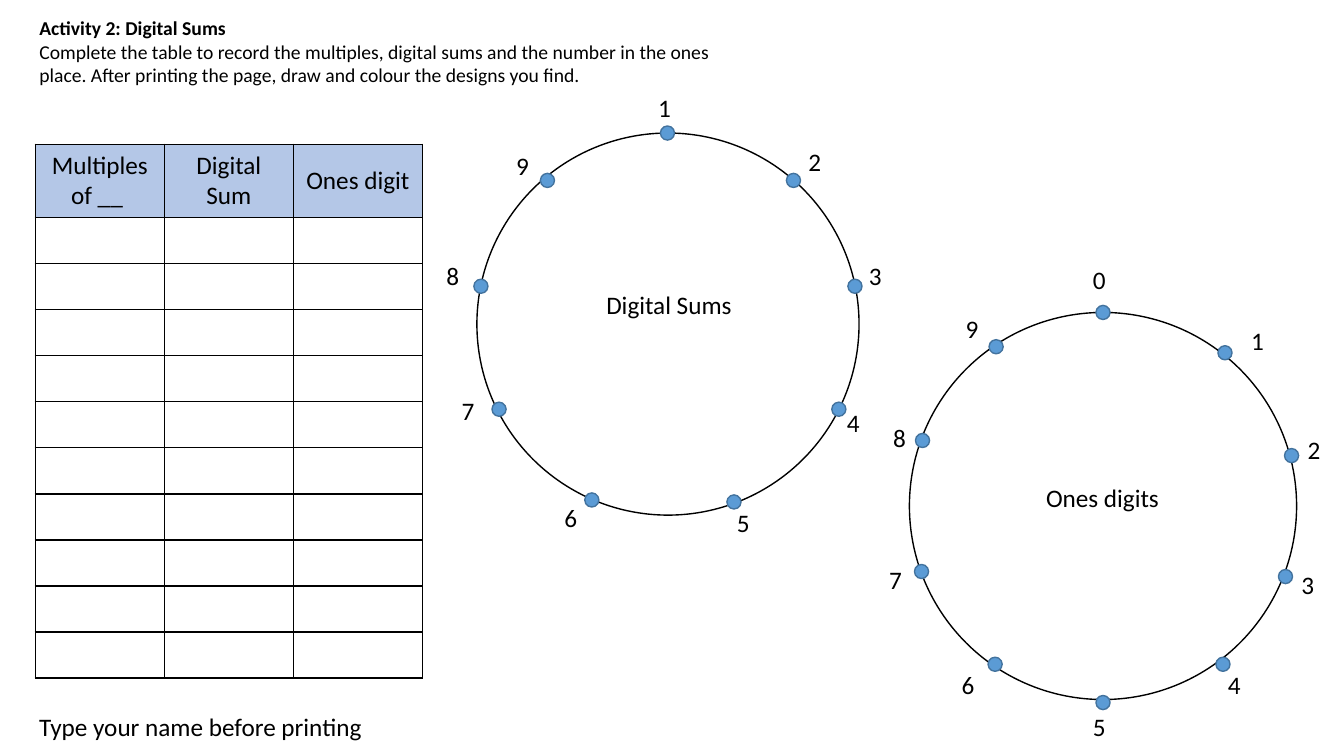
"""Build the digital sums worksheet: a table to fill in and two rings of dots."""
from lxml import etree
from pptx import Presentation
from pptx.dml.color import RGBColor
from pptx.enum.shapes import MSO_SHAPE
from pptx.enum.text import MSO_ANCHOR, MSO_AUTO_SIZE, PP_ALIGN
from pptx.oxml.ns import qn
from pptx.util import Inches, Pt

HUES = {"ink": "000000", "head": "B4C7E7", "dot": "5B9BD5", "edge": "43739E"}
RGB = {name: RGBColor.from_string(hue) for name, hue in HUES.items()}
FRAME = {"word_wrap": False, "auto_size": MSO_AUTO_SIZE.NONE, "vertical_anchor": MSO_ANCHOR.TOP}
FONT = {"name": "Calibri", "size": Pt(18), "bold": False}

deck = Presentation()
deck.slide_width, deck.slide_height = Inches(13.33), Inches(7.5)
UNIT = deck.slide_height // 750
page = deck.slides.add_slide(deck.slide_layouts[5])


def write(frame, lines, align=PP_ALIGN.LEFT, **extra):
    """Fill a text frame with evenly formatted lines."""
    for key, value in (FRAME | extra).items():
        setattr(frame, key, value)
    frame.text = "\n".join(lines)
    for para in frame.paragraphs:
        para.alignment = align
        for key, value in FONT.items():
            setattr(para.font, key, value)
        para.font.color.rgb = RGB["ink"]


def disc(shapes, x, y, size, line, fill=None):
    """Draw a circle from its top left corner, hollow if no fill is named."""
    shape = shapes.add_shape(MSO_SHAPE.OVAL, *(UNIT * n for n in (x, y, size, size)))
    shape.shadow.inherit = False
    shape.line.color.rgb, shape.line.width = RGB[line], Pt(1)
    if fill:
        shape.fill.solid()
        shape.fill.fore_color.rgb = RGB[fill]
    else:
        shape.fill.background()


title = page.shapes.title
title.left, title.top, title.width, title.height = (UNIT * n for n in (29, 11, 722, 81))
write(title.text_frame, [
    "Activity 2: Digital Sums",
    "Complete the table to record the multiples, digital sums and the number in the ones "
    "place. After printing the page, draw and colour the designs you find.",
], word_wrap=True)
for para in title.text_frame.paragraphs:
    para.font.size = Pt(14)
title.text_frame.paragraphs[0].font.bold = True

heads = ["Multiples of __ ", "Digital Sum", "Ones digit"]
table = page.shapes.add_table(11, 3, *(UNIT * n for n in (35, 143, 384, 530))).table
table.first_row = table.horz_banding = False
for col in table.columns:
    col.width = UNIT * 128
for i, row in enumerate(table.rows):
    row.height = Inches(0.457 if i else 0.73)
    for j, cell in enumerate(row.cells):
        write(cell.text_frame, [heads[j] if i == 0 else ""], PP_ALIGN.CENTER, word_wrap=True)
        cell.vertical_anchor = MSO_ANCHOR.MIDDLE
        props = cell._tc.get_or_add_tcPr()
        for side in ("a:lnL", "a:lnR", "a:lnT", "a:lnB"):
            edge = etree.SubElement(props, qn(side), w=str(Pt(1)))
            fill = etree.SubElement(edge, qn("a:solidFill"))
            etree.SubElement(fill, qn("a:srgbClr"), val=HUES["ink"])
        if i == 0:
            cell.fill.solid()
            cell.fill.fore_color.rgb = RGB["head"]
        else:
            cell.fill.background()

RINGS = [
    ((473, 132, 379), "Digital Sums", (576, 282, 175, 48), {
        "1": (655, 125, 643, 87), "2": (780, 172, 792, 140), "3": (841, 277, 852, 253),
        "4": (825, 399, 830, 399), "5": (721, 491, 721, 498), "6": (580, 489, 550, 493),
        "7": (488, 399, 448, 387), "8": (470, 277, 433, 253), "9": (536, 172, 502, 144),
    }),
    ((902, 310, 384), "Ones digits", (1027, 474, 133, 40), {
        "0": (1087, 303, 1074, 257), "1": (1208, 343, 1231, 318), "2": (1274, 445, 1287, 426),
        "3": (1268, 565, 1281, 560), "4": (1206, 652, 1208, 659), "5": (1087, 690, 1074, 701),
        "6": (980, 652, 944, 659), "7": (907, 560, 872, 555), "8": (908, 430, 876, 414),
        "9": (981, 337, 948, 306),
    }),
]
for ring, name, place, dots in RINGS:
    shapes = page.shapes.add_group_shape().shapes
    disc(shapes, *ring, "ink")
    for digit, (x, y, left, top) in dots.items():
        disc(shapes, x, y, 14, "edge", "dot")
        box = shapes.add_textbox(*(UNIT * n for n in (left, top, 39, 48)))
        write(box.text_frame, [digit])
    box = shapes.add_textbox(*(UNIT * n for n in place))
    write(box.text_frame, [name], PP_ALIGN.CENTER)

box = page.shapes.add_textbox(*(UNIT * n for n in (29, 701, 344, 40)))
write(box.text_frame, ["Type your name before printing"])

deck.save("out.pptx")
